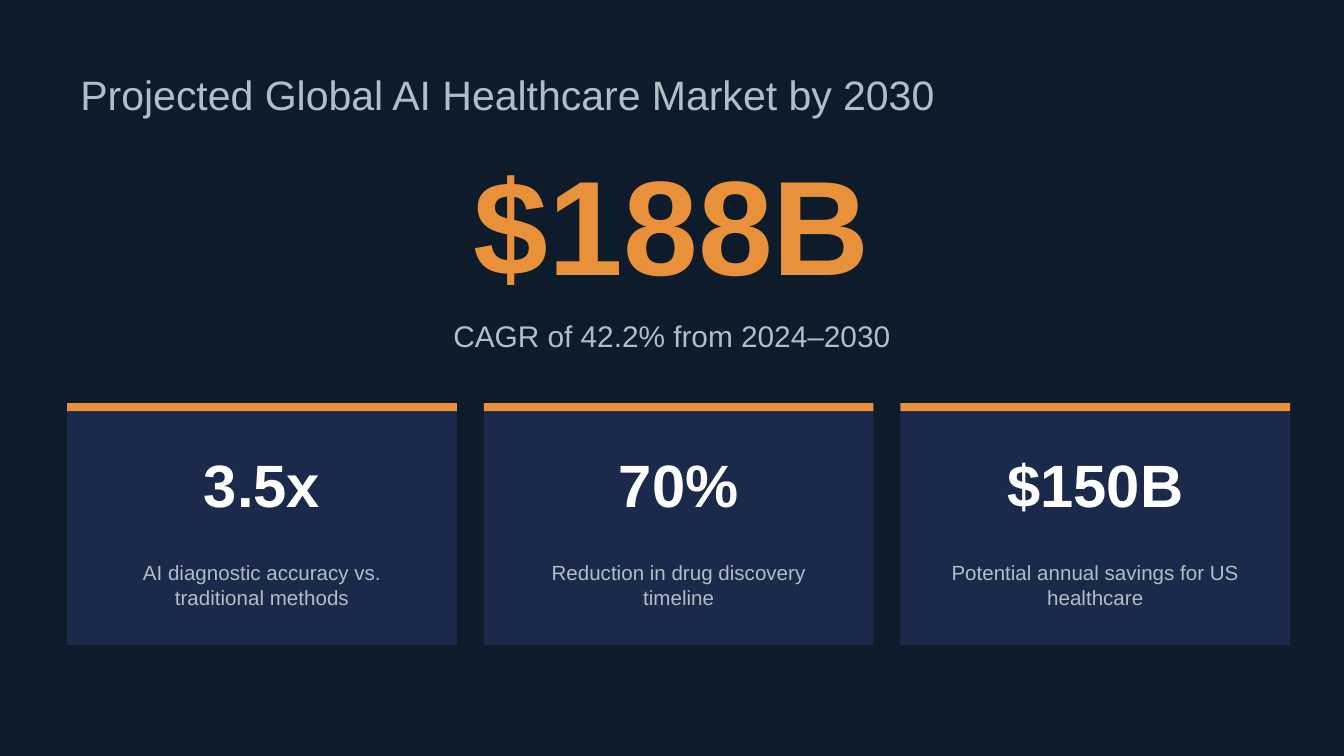
from pptx import Presentation
from pptx.dml.color import RGBColor
from pptx.enum.shapes import MSO_SHAPE
from pptx.enum.text import MSO_ANCHOR, PP_ALIGN
from pptx.util import Inches, Pt

RECT = MSO_SHAPE.RECTANGLE
MIDDLE = MSO_ANCHOR.MIDDLE
LEFT, CENTER = PP_ALIGN.LEFT, PP_ALIGN.CENTER

NAVY = RGBColor(0x0D, 0x1B, 0x2A)
CARD = RGBColor(0x1B, 0x2A, 0x4A)
ORANGE = RGBColor(0xE8, 0x91, 0x3A)
GREY = RGBColor(0xB0, 0xBE, 0xC5)
WHITE = RGBColor(0xFF, 0xFF, 0xFF)

# Grid in inches, on a 16:9 slide
SLIDE_W = 10
SLIDE_H = SLIDE_W * 9 / 16
MARGIN = 0.5
CONTENT_W = SLIDE_W - 2 * MARGIN
CARD_W, CARD_H, CARD_GAP = 2.9, 1.8, 0.2
CARD_TOP = 3
BAR_H = 0.06
CAPTION_INSET = 0.15

# Font formats
TITLE = {"size": Pt(22), "bold": False}
HERO = {"size": Pt(72), "bold": True}
SUBTITLE = {"size": Pt(16), "bold": False}
VALUE = {"size": Pt(32), "bold": True}
CAPTION = {"size": Pt(11), "bold": False}

STATS = [
    ("3.5x", "AI diagnostic accuracy vs. traditional methods"),
    ("70%", "Reduction in drug discovery timeline"),
    ("$150B", "Potential annual savings for US healthcare"),
]


def add_text(s, text, x, y, w, h, fmt, color, align=CENTER):
    sp = s.shapes.add_textbox(Inches(x), Inches(y), Inches(w), Inches(h))
    tf = sp.text_frame
    tf.word_wrap = True
    tf.vertical_anchor = MIDDLE
    p = tf.paragraphs[0]
    p.alignment = align
    r = p.add_run()
    r.text = text
    r.font.name = "Arial"
    r.font.color.rgb = color
    for name, value in fmt.items():
        setattr(r.font, name, value)


def add_rect(s, x, y, w, h, color):
    sp = s.shapes.add_shape(RECT, Inches(x), Inches(y), Inches(w), Inches(h))
    sp.shadow.inherit = False
    sp.fill.solid()
    sp.fill.fore_color.rgb = color
    sp.line.fill.background()


def add_stat_card(s, col, value, caption):
    x = MARGIN + col * (CARD_W + CARD_GAP)
    add_rect(s, x, CARD_TOP, CARD_W, CARD_H, CARD)
    add_rect(s, x, CARD_TOP, CARD_W, BAR_H, ORANGE)
    add_text(s, value, x, CARD_TOP + 0.2, CARD_W, 0.8, VALUE, WHITE)
    add_text(s, caption, x + CAPTION_INSET, CARD_TOP + 1,
             CARD_W - 2 * CAPTION_INSET, 0.7, CAPTION, GREY)


def main():
    prs = Presentation()
    prs.slide_width, prs.slide_height = Inches(SLIDE_W), Inches(SLIDE_H)
    s = prs.slides.add_slide(prs.slide_layouts[6])
    s.background.fill.solid()
    s.background.fill.fore_color.rgb = NAVY

    # Headline figure
    add_text(s, "Projected Global AI Healthcare Market by 2030",
             MARGIN, 0.4, CONTENT_W, 0.6, TITLE, GREY, LEFT)
    add_text(s, "$188B", MARGIN, 1, CONTENT_W, 1.3, HERO, ORANGE)
    add_text(s, "CAGR of 42.2% from 2024–2030",
             MARGIN, 2.3, CONTENT_W, 0.4, SUBTITLE, GREY)

    # Row of supporting figures
    for col, (value, caption) in enumerate(STATS):
        add_stat_card(s, col, value, caption)

    prs.save("out.pptx")


if __name__ == "__main__":
    main()
